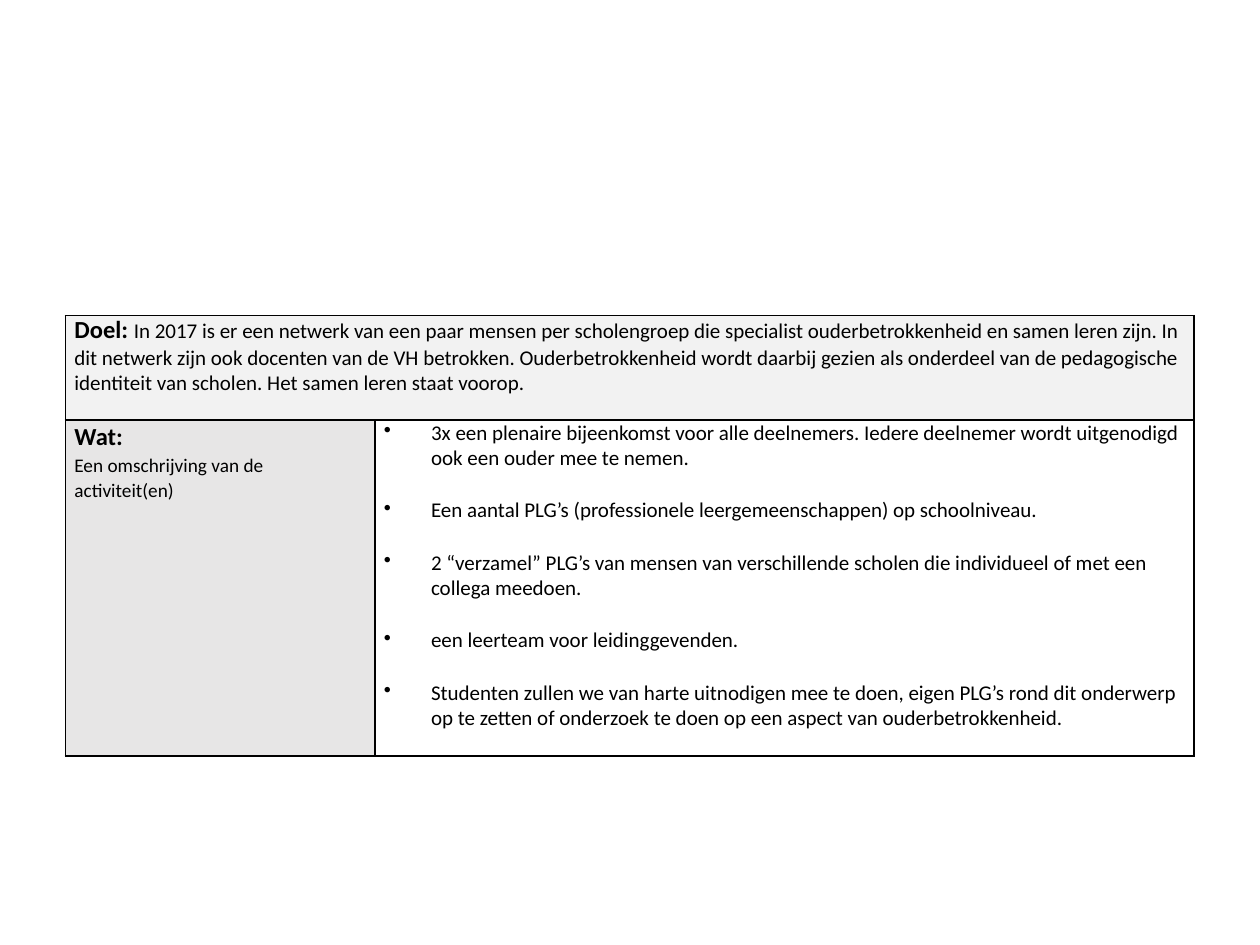
"""Build a slide with a table of a network's goal and activities."""
from dataclasses import dataclass
from typing import Any

from lxml import etree
from pptx import Presentation
from pptx.dml.color import RGBColor
from pptx.oxml.ns import qn
from pptx.util import Cm, Pt

BLANK_LAYOUT = 6
FONT = "Calibri"
BLACK = "000000"
BORDER_SIDES = ("a:lnL", "a:lnR", "a:lnT", "a:lnB")
COLUMN_WIDTHS = (6.24, 16.51)
ROW_HEIGHTS = (2.11, 6.77)
BULLET_INDENT = Cm(0.95)


@dataclass(frozen=True)
class Span:
    """A stretch of text in one size and weight."""

    text: str
    size: float = 12
    bold: bool = False


@dataclass(frozen=True)
class Para:
    """A paragraph with its spacing and optional bullet."""

    spans: tuple[Span, ...]
    line_spacing: float = 1.0
    space_after: float = 0
    bullet: bool = False


@dataclass(frozen=True)
class CellContent:
    """The place, fill and text of one table cell."""

    row: int
    column: int
    paras: tuple[Para, ...]
    fill: str | None = None


ACTIVITIES = (
    "3x een plenaire bijeenkomst voor alle deelnemers. Iedere deelnemer wordt "
    "uitgenodigd ook een ouder mee te nemen.",
    "Een aantal PLG’s (professionele leergemeenschappen) op schoolniveau.",
    "2 “verzamel” PLG’s van mensen van verschillende scholen die individueel "
    "of met een collega meedoen.",
    "een leerteam voor leidinggevenden.",
    "Studenten zullen we van harte uitnodigen mee te doen, eigen PLG’s rond dit "
    "onderwerp op te zetten of onderzoek te doen op een aspect van "
    "ouderbetrokkenheid.",
)
GOAL = (
    "In 2017 is er een netwerk van een paar mensen per scholengroep die specialist "
    "ouderbetrokkenheid en samen leren zijn. In dit netwerk zijn ook docenten van "
    "de VH betrokken. Ouderbetrokkenheid wordt daarbij gezien als onderdeel van de "
    "pedagogische identiteit van scholen. Het samen leren staat voorop."
)
CELLS = (
    CellContent(0, 0, (Para((Span("Doel: ", 14, True), Span(GOAL))),), "F2F2F2"),
    CellContent(
        1,
        0,
        (
            Para((Span("Wat:", 14, True),), 1.07),
            Para((Span("Een omschrijving van de activiteit(en)", 11),), 1.07),
        ),
        "E7E6E6",
    ),
    CellContent(
        1,
        1,
        tuple(
            Para((Span(text),), space_after=15.2, bullet=True) for text in ACTIVITIES
        ),
    ),
)


def color(value: str) -> RGBColor:
    """Turn a hex string into a colour."""
    return RGBColor.from_string(value)


def apply_format(target: Any, values: dict[str, Any]) -> None:
    """Set each named attribute of the target."""
    for name, value in values.items():
        setattr(target, name, value)


def add_bullet(paragraph: Any) -> None:
    """Give a paragraph a hanging bullet."""
    properties = paragraph._p.get_or_add_pPr()
    properties.set("marL", str(BULLET_INDENT))
    properties.set("indent", str(-BULLET_INDENT))
    etree.SubElement(properties, qn("a:buChar"), char="•")


def add_borders(cell: Any) -> None:
    """Draw a thin black line on every side of a cell."""
    properties = cell._tc.get_or_add_tcPr()
    for side in BORDER_SIDES:
        line = etree.SubElement(properties, qn(side), w=str(Pt(1)))
        fill = etree.SubElement(line, qn("a:solidFill"))
        etree.SubElement(fill, qn("a:srgbClr"), val=BLACK)


def write_paragraph(paragraph: Any, para: Para) -> None:
    """Write the spans and spacing of one paragraph."""
    apply_format(
        paragraph,
        {"line_spacing": para.line_spacing, "space_after": Pt(para.space_after)},
    )
    if para.bullet:
        add_bullet(paragraph)
    for span in para.spans:
        run = paragraph.add_run()
        run.text = span.text
        apply_format(
            run.font, {"name": FONT, "size": Pt(span.size), "bold": span.bold}
        )
        run.font.color.rgb = color(BLACK)


def fill_cell(cell: Any, content: CellContent) -> None:
    """Fill a cell with its colour and paragraphs."""
    apply_format(
        cell,
        {
            "margin_left": Cm(0.18),
            "margin_right": Cm(0.18),
            "margin_top": 0,
            "margin_bottom": 0,
        },
    )
    if content.fill:
        cell.fill.solid()
        cell.fill.fore_color.rgb = color(content.fill)
    else:
        cell.fill.background()
    frame = cell.text_frame
    for index, para in enumerate(content.paras):
        paragraph = frame.add_paragraph() if index else frame.paragraphs[0]
        write_paragraph(paragraph, para)


def add_plan_table(page: Any) -> None:
    """Add the table with the goal above the activities."""
    table = page.shapes.add_table(
        len(ROW_HEIGHTS),
        len(COLUMN_WIDTHS),
        Cm(1.32),
        Cm(6.36),
        Cm(sum(COLUMN_WIDTHS)),
        Cm(sum(ROW_HEIGHTS)),
    ).table
    apply_format(table, {"first_row": False, "horz_banding": False})
    for column, width in zip(table.columns, COLUMN_WIDTHS):
        column.width = Cm(width)
    for row, height in zip(table.rows, ROW_HEIGHTS):
        row.height = Cm(height)
    for cell in table.iter_cells():
        add_borders(cell)
    table.cell(0, 0).merge(table.cell(0, 1))
    for content in CELLS:
        fill_cell(table.cell(content.row, content.column), content)


def main() -> None:
    """Create and save the deck."""
    deck = Presentation()
    apply_format(deck, {"slide_width": Cm(25.4), "slide_height": Cm(19.05)})
    page = deck.slides.add_slide(deck.slide_layouts[BLANK_LAYOUT])
    add_plan_table(page)
    deck.save("out.pptx")


if __name__ == "__main__":
    main()
